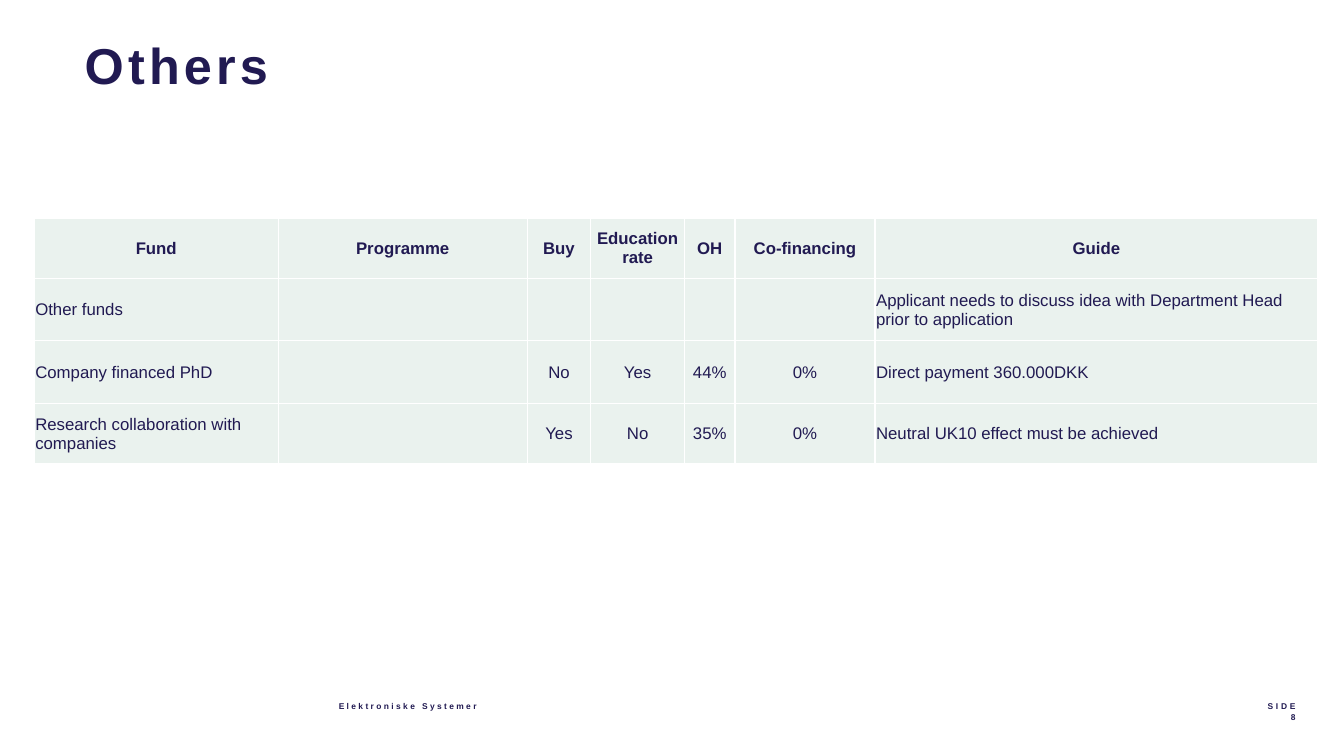
from lxml import etree
from pptx import Presentation
from pptx import util as u
from pptx.dml.color import RGBColor
from pptx.enum import text
from pptx.oxml.ns import qn

HUES = {"ink": "211A52", "mint": "EAF2EE", "rule": "FFFFFF"}
FACE = "Arial"
LEFT, MID, RIGHT = text.PP_ALIGN.LEFT, text.PP_ALIGN.CENTER, text.PP_ALIGN.RIGHT
COLS = [2.42, 2.47, 0.63, 0.93, 0.5, 1.39, 4.39]
ROWS = [0.59, 0.62, 0.62, 0.6]
FUNDS = [
    ["Fund", "Programme", "Buy", "Education rate", "OH", "Co-financing", "Guide"],
    ["Other funds", "", "", "", "", "",
     "Applicant needs to discuss idea with Department Head prior to application"],
    ["Company financed PhD", "", "No", "Yes", "44%", "0%", "Direct payment 360.000DKK"],
    ["Research collaboration with companies", "", "Yes", "No", "35%", "0%",
     "Neutral UK10 effect must be achieved"],
]


def hue(name):
    return RGBColor.from_string(HUES[name])


def style(para, size, bold, align):
    para.alignment = align
    font = para.font
    font.name, font.size, font.bold = FACE, u.Pt(size), bold
    font.color.rgb = hue("ink")


def write(shape, lines, size, gap, align=LEFT, right=0, base=0):
    frame = shape.text_frame
    frame.word_wrap = True
    frame.auto_size = text.MSO_AUTO_SIZE.NONE
    frame.vertical_anchor = text.MSO_ANCHOR.TOP
    frame.margin_left = frame.margin_top = 0
    frame.margin_right, frame.margin_bottom = u.Inches(right), u.Inches(base)
    frame.text = "\n".join(lines)
    for para in frame.paragraphs:
        style(para, size, True, align)
        for run in para.runs:
            run._r.get_or_add_rPr().set("spc", str(int(gap * 100)))


def head(slide, words):
    title = slide.shapes.title
    title.left, title.top = u.Inches(0.84), u.Inches(0.34)
    title.width, title.height = u.Inches(10.33), u.Inches(1.53)
    write(title, [words], 36, 3, right=0.1, base=0.05)


def foot(slide, left, width, lines, gap, align):
    box = slide.shapes.add_textbox(*map(u.Inches, (left, 6.96, width, 0.31)))
    write(box, lines, 6, gap, align)


def edge(cell):
    props = cell._tc.get_or_add_tcPr()
    for spot, side in enumerate(("a:lnL", "a:lnR", "a:lnT", "a:lnB")):
        line = etree.Element(qn(side), w=str(u.Pt(1)))
        fill = etree.SubElement(line, qn("a:solidFill"))
        etree.SubElement(fill, qn("a:srgbClr"), val=HUES["rule"])
        props.insert(spot, line)


def fill(cell, words, first, align):
    cell.fill.solid()
    cell.fill.fore_color.rgb = hue("mint")
    edge(cell)
    cell.vertical_anchor = text.MSO_ANCHOR.MIDDLE
    pad = u.Inches(0 if first else 0.01)
    cell.margin_left = cell.margin_top = cell.margin_right = pad
    cell.margin_bottom = 0
    cell.text = words
    style(cell.text_frame.paragraphs[0], 12, first, align)


def grid(slide):
    area = map(u.Inches, (0.34, 2.17, sum(COLS), sum(ROWS)))
    table = slide.shapes.add_table(len(ROWS), len(COLS), *area).table
    for col, width in zip(table.columns, COLS):
        col.width = u.Inches(width)
    for row, height in zip(table.rows, ROWS):
        row.height = u.Inches(height)
    for r, row in enumerate(FUNDS):
        for c, words in enumerate(row):
            side = r > 0 and c in (0, len(COLS) - 1)
            fill(table.cell(r, c), words, r == 0, LEFT if side else MID)


def main():
    deck = Presentation()
    deck.slide_width, deck.slide_height = u.Inches(13.33), u.Inches(7.5)
    slide = deck.slides.add_slide(deck.slide_layouts[5])
    head(slide, "Others")
    grid(slide)
    foot(slide, 3.36, 1.99, ["Elektroniske Systemer"], 1.7, LEFT)
    foot(slide, 11.3, 1.55, ["SIDE", "8"], 2, RIGHT)
    deck.save("out.pptx")


if __name__ == "__main__":
    main()
